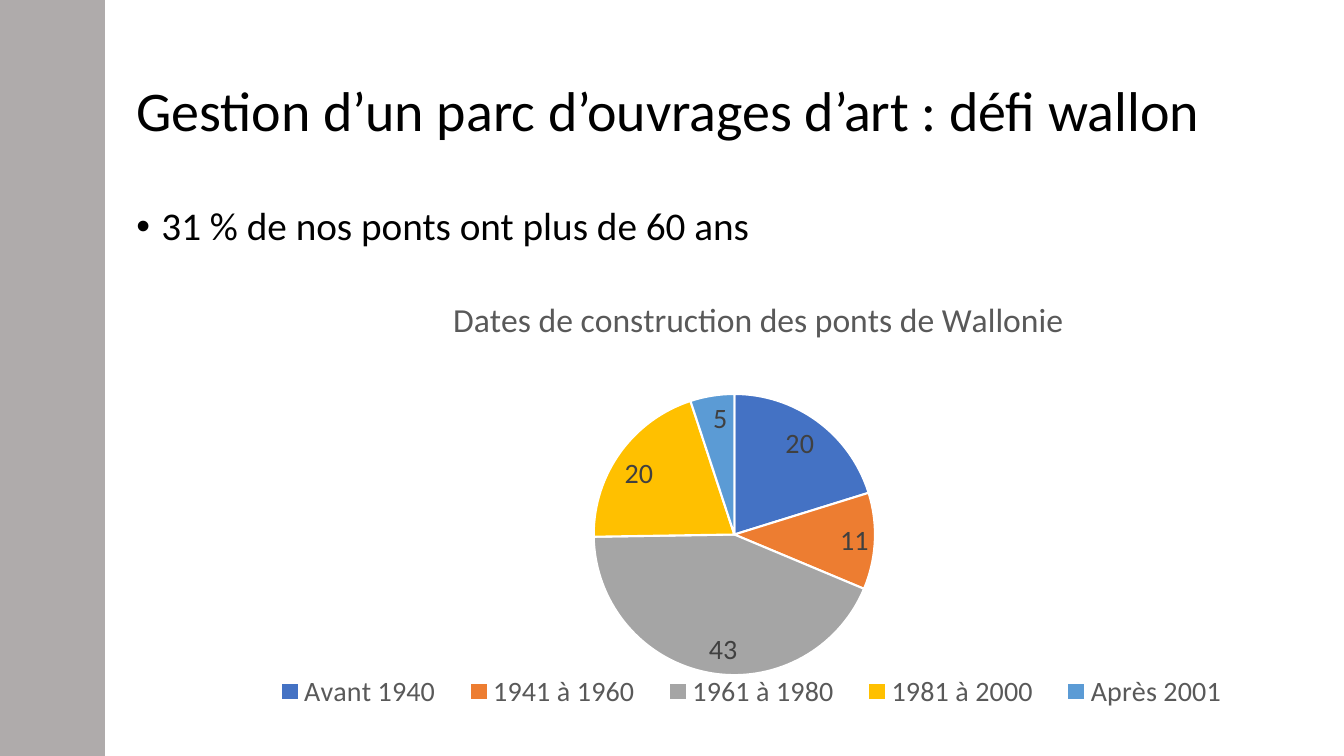
import pptx
import pptx.chart.data
import pptx.dml.color
import pptx.enum.chart
import pptx.enum.shapes
import pptx.enum.text
import pptx.oxml
import pptx.oxml.ns
import pptx.util

INK = {"bar": "AFABAB", "text": "000000", "soft": "595959", "label": "404040", "edge": "FFFFFF"}
AGES = {
    "Avant 1940": (20, "4472C4"),
    "1941 à 1960": (11, "ED7D31"),
    "1961 à 1980": (43, "A5A5A5"),
    "1981 à 2000": (20, "FFC000"),
    "Après 2001": (5, "5B9BD5"),
}


def tint(code):
    return pptx.dml.color.RGBColor.from_string(code)


def node(tag, **attrs):
    item = pptx.oxml.parse_xml(f"<{tag} {pptx.oxml.ns.nsdecls(tag.split(':')[0])}/>")
    for key, value in attrs.items():
        item.set(key, str(value))
    return item


def pin(part, index, inner=False, **box):
    for old in part.findall(pptx.oxml.ns.qn("c:layout")):
        part.remove(old)
    layout, manual = node("c:layout"), node("c:manualLayout")
    layout.append(manual)
    if inner:
        manual.append(node("c:layoutTarget", val="inner"))
    for axis in ("x", "y"):
        manual.append(node(f"c:{axis}Mode", val="edge"))
    for key, value in box.items():
        manual.append(node(f"c:{key}", val=value))
    part.insert(index, layout)


class Deck:
    face = "Calibri"

    def __init__(self):
        self.file = pptx.Presentation()
        self.file.slide_width = pptx.util.Inches(13.33)
        self.file.slide_height = pptx.util.Inches(7.5)
        self.slide = self.file.slides.add_slide(self.file.slide_layouts[6])

    def place(self, left, top, width, height):
        wide, high = self.file.slide_width, self.file.slide_height
        return int(left * wide), int(top * high), int(width * wide), int(height * high)

    def style(self, font, size, color):
        font.name, font.size, font.bold = self.face, pptx.util.Pt(size), False
        font.color.rgb = tint(color)

    def bar(self, area, color):
        kind = pptx.enum.shapes.MSO_SHAPE.RECTANGLE
        shape = self.slide.shapes.add_shape(kind, *self.place(*area))
        shape.shadow.inherit = False
        shape.fill.solid()
        shape.fill.fore_color.rgb = tint(color)
        shape.line.fill.background()

    def text(self, area, words, size, middle=False, bullet=False):
        frame = self.slide.shapes.add_textbox(*self.place(*area)).text_frame
        frame.word_wrap = True
        anchor = pptx.enum.text.MSO_ANCHOR
        frame.vertical_anchor = anchor.MIDDLE if middle else anchor.TOP
        para = frame.paragraphs[0]
        para.text = words
        para.line_spacing = 0.9
        if bullet:
            props = para._p.get_or_add_pPr()
            step = pptx.util.Inches(0.25)
            props.set("marL", str(step))
            props.set("indent", str(-step))
            props.append(node("a:buFont", typeface="Arial"))
            props.append(node("a:buChar", char="•"))
        self.style(para.font, size, INK["text"])

    def pie(self, area, title, ages):
        data = pptx.chart.data.CategoryChartData(number_format="0")
        data.categories = list(ages)
        data.add_series("Series 1", [value for value, color in ages.values()])
        kind = pptx.enum.chart.XL_CHART_TYPE.PIE
        chart = self.slide.shapes.add_chart(kind, *self.place(*area), data).chart
        self.style(chart.font, 10, INK["text"])

        chart.has_title = True
        para = chart.chart_title.text_frame.paragraphs[0]
        para.text = title
        self.style(para.font, 24, INK["soft"])
        pin(chart.chart_title._element, 1, x=0.23, y=0.04)

        chart.has_legend = True
        chart.legend.position = pptx.enum.chart.XL_LEGEND_POSITION.BOTTOM
        chart.legend.include_in_layout = False
        self.style(chart.legend.font, 20, INK["soft"])
        pin(chart.legend._element, 1, x=0.06, y=0.85, w=0.88, h=0.09)

        plot = chart.plots[0]
        plot.vary_by_categories = True
        for index, (value, color) in enumerate(ages.values()):
            point = plot.series[0].points[index].format
            point.fill.solid()
            point.fill.fore_color.rgb = tint(color)
            point.line.color.rgb = tint(INK["edge"])
            point.line.width = pptx.util.Pt(1.5)
        plot.has_data_labels = True
        labels = plot.data_labels
        labels.show_value, labels.show_percentage = True, False
        labels.number_format, labels.number_format_is_linked = "0", False
        labels.position = pptx.enum.chart.XL_LABEL_POSITION.INSIDE_END
        self.style(labels.font, 20, INK["label"])
        zone = chart._chartSpace.find(".//" + pptx.oxml.ns.qn("c:plotArea"))
        pin(zone, 0, inner=True, x=0.36, y=0.26, w=0.25, h=0.6)


def main():
    deck = Deck()
    left, width = 0.094, 0.838
    deck.bar((0, 0, 0.078, 1), INK["bar"])
    deck.text((left, 0.053, width, 0.193),
              "Gestion d’un parc d’ouvrages d’art : défi wallon", 40, middle=True)
    deck.text((left, 0.267, width, 0.635),
              "31 % de nos ponts ont plus de 60 ans", 28, bullet=True)
    deck.pie((0.14, 0.36, width, 0.62), "Dates de construction des ponts de Wallonie", AGES)
    deck.file.save("out.pptx")


if __name__ == "__main__":
    main()
